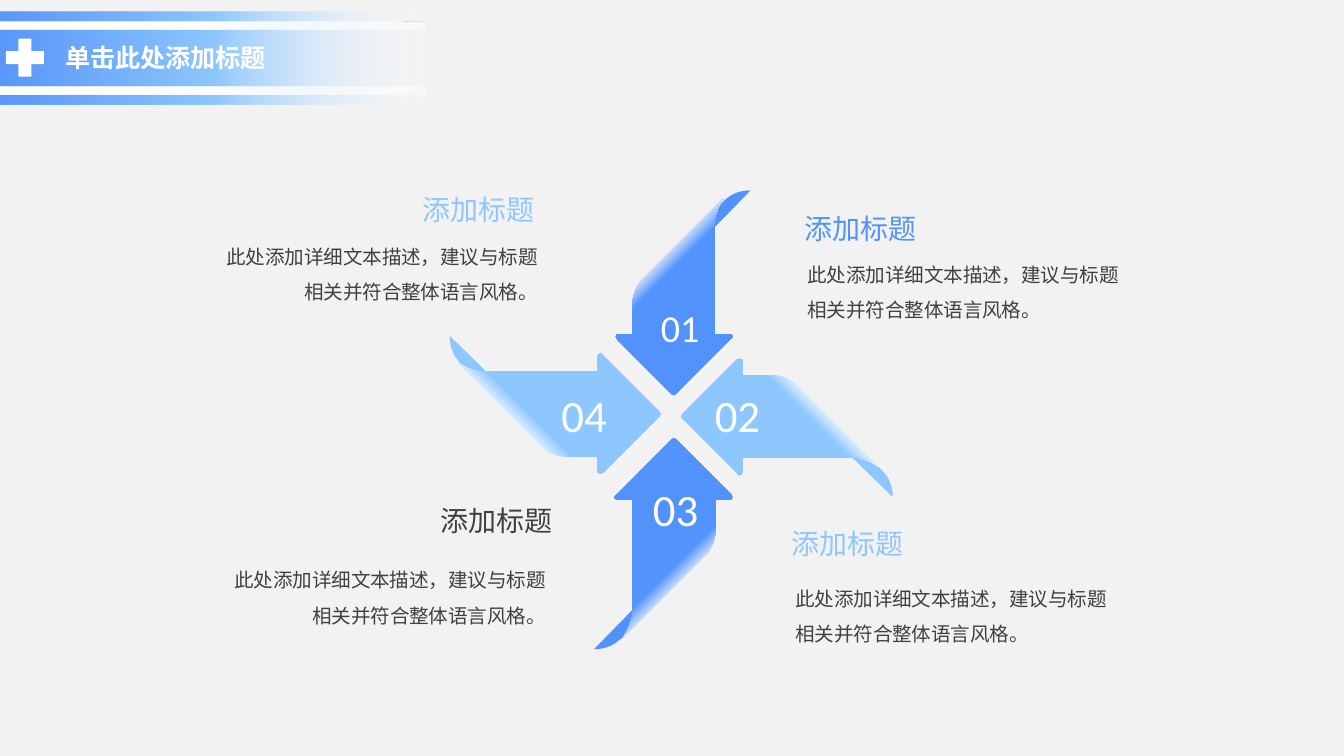
from lxml import etree
from pptx import Presentation
from pptx.dml.color import RGBColor
from pptx.enum.shapes import MSO_SHAPE
from pptx.enum.text import MSO_ANCHOR, PP_ALIGN
from pptx.oxml.ns import qn
from pptx.util import Cm, Pt

RECTANGLE, PLUS = MSO_SHAPE.RECTANGLE, MSO_SHAPE.CROSS
TOP, MIDDLE, BOTTOM = MSO_ANCHOR.TOP, MSO_ANCHOR.MIDDLE, MSO_ANCHOR.BOTTOM
LEFT, RIGHT = PP_ALIGN.LEFT, PP_ALIGN.RIGHT

BLUE, SKY, WHITE, GREY, BACKGROUND = "5293FB", "8DC7FE", "FFFFFF", "404040", "F2F2F2"
CHINESE, LATIN = "Noto Sans CJK SC", "Calibri"

HEADING = "单击此处添加标题"
TITLE = "添加标题"
BODY = "此处添加详细文本描述，建议与标题相关并符合整体语言风格。"

# Header bands: top, height, gradient stops (position %, colour, opacity %)
BAND_WIDTH = 8.05
STRIPE = [(0, WHITE, 100), (50, WHITE, 100), (100, WHITE, 50)]
BANDS = [
    (0.23, 1.75, [(0, BLUE, 95), (50, SKY, 100), (100, WHITE, 8)]),
    (0.41, 0.15, STRIPE),
    (1.64, 0.15, STRIPE),
]

# Blade pointing right, tip at the origin, in cm.
# A step is one point (line) or three points (Bezier curve).
RIBBON = [
    [(-1.09, 1.1)],
    [(-0.05, 0.06)],
    [(0, 0.03), (0, -0.03), (-0.05, -0.06)],
    [(-1.09, -1.1)],
    [(-1.12, -1.16), (-1.17, -1.16), (-1.19, -1.1)],
    [(-1.19, -0.8)],
    [(-3.28, -0.8)],
    [(-3.28, -0.8), (-3.33, -0.8), (-3.43, -0.8)],
    [(-3.61, -0.85), (-3.73, -0.9), (-3.84, -0.98)],
    [(-2.26, 0.6)],
    [(-2.26, 0.6), (-2.08, 0.83), (-1.65, 0.8)],
    [(-1.19, 0.8)],
    [(-1.19, 1.1)],
    [(-1.17, 1.13), (-1.12, 1.13), (-1.09, 1.1)],
]
CURL = [
    [(-3.18, -0.7)],
    [(-3.99, -1.49)],
    [(-3.99, -1.49), (-4.01, -1.21), (-3.81, -1)],
    [(-3.78, -0.95), (-3.76, -0.93), (-3.71, -0.9)],
    [(-3.63, -0.83), (-3.48, -0.75), (-3.3, -0.72)],
    [(-3.28, -0.72), (-3.23, -0.7), (-3.18, -0.7)],
]

BLADES = [
    dict(number="01", color=BLUE, turns=1, scale=0.97,
         tip=(12.73, 7.47), curl_tip=(12.74, 7.47),
         label=(12.24, 5.56, 1.27, 1.24), size=20.4,
         title=(14.96, 3.51), title_color=BLUE, body=(15.01, 4.4), align=LEFT),
    dict(number="03", color=BLUE, turns=3, scale=0.98,
         tip=(12.74, 8.28), curl_tip=(12.69, 8.36),
         label=(12.09, 8.81, 1.57, 1.6), size=24,
         title=(4.22, 9.04), title_color=GREY, body=(4.09, 10.17), align=RIGHT),
    dict(number="04", color=SKY, turns=0, scale=1,
         tip=(12.49, 7.83), curl_tip=(12.49, 7.84),
         label=(10.36, 7.04, 1.57, 1.6), size=24,
         title=(3.88, 3.16), title_color=SKY, body=(3.94, 4.06), align=RIGHT),
    dict(number="02", color=SKY, turns=2, scale=0.97,
         tip=(12.87, 7.87), curl_tip=(13, 7.95),
         label=(13.26, 7.04, 1.57, 1.6), size=24,
         title=(14.71, 9.47), title_color=SKY, body=(14.78, 10.52), align=LEFT),
]
TITLE_SIZE, BODY_SIZE = (6.48, 1.24), (6.48, 2.03)


def rgb(value):
    return RGBColor.from_string(value)


def fill_solid(shape, color):
    shape.shadow.inherit = False
    shape.line.fill.background()
    shape.fill.solid()
    shape.fill.fore_color.rgb = rgb(color)


def fill_gradient(shape, stops, angle):
    """Linear gradient; the angle runs counter-clockwise from left-to-right."""
    shape.shadow.inherit = False
    shape.line.fill.background()
    shape.fill.gradient()
    shape.fill.gradient_angle = angle
    stop_list = shape._element.spPr.find(qn("a:gradFill")).find(qn("a:gsLst"))
    for stop in list(stop_list):
        stop_list.remove(stop)
    for position, color, opacity in stops:
        stop = etree.SubElement(stop_list, qn("a:gs"), pos=str(position * 1000))
        color_element = etree.SubElement(stop, qn("a:srgbClr"), val=color)
        if opacity < 100:
            etree.SubElement(color_element, qn("a:alpha"), val=str(opacity * 1000))


def add_text(slide, box, text, color, size, font=CHINESE, bold=False,
             anchor=TOP, **paragraph_format):
    shape = slide.shapes.add_textbox(*map(Cm, box))
    frame = shape.text_frame
    frame.word_wrap = True
    frame.vertical_anchor = anchor
    paragraph = frame.paragraphs[0]
    for name, value in paragraph_format.items():
        setattr(paragraph, name, value)
    run = paragraph.add_run()
    run.text = text
    for name, value in dict(name=font, size=Pt(size), bold=bold).items():
        setattr(run.font, name, value)
    run.font.color.rgb = rgb(color)
    etree.SubElement(run._r.get_or_add_rPr(), qn("a:ea"), typeface=font)


def add_outline(slide, steps, blade, tip):
    """Scale the steps, turn them clockwise by quarters and move them to the tip."""
    placed = []
    for x, y in sum(steps, []):
        for _ in range(blade["turns"]):
            x, y = -y, x
        placed.append(tuple(Cm(start + blade["scale"] * offset)
                            for start, offset in zip(tip, (x, y))))
    builder = slide.shapes.build_freeform(*placed[0], scale=1.0)
    builder.add_line_segments(placed[1:], close=True)
    shape = builder.convert_to_shape()
    join_curves(shape, steps)
    return shape


def join_curves(shape, steps):
    """Merge the three line segments of each curve step into one Bezier curve."""
    lines = iter(list(shape._element.spPr.iter(qn("a:lnTo"))))
    for step in steps[1:]:
        segments = [next(lines) for _ in step]
        if len(segments) == 3:
            curve = etree.Element(qn("a:cubicBezTo"))
            segments[0].addprevious(curve)
            for segment in segments:
                curve.append(segment[0])
                segment.getparent().remove(segment)


def add_header(slide):
    for top, height, stops in BANDS:
        band = slide.shapes.add_shape(RECTANGLE, 0, Cm(top), Cm(BAND_WIDTH), Cm(height))
        fill_gradient(band, stops, 0)
    plus = slide.shapes.add_shape(PLUS, Cm(0.11), Cm(0.73), Cm(0.72), Cm(0.72))
    plus.adjustments[0] = 0.33
    fill_solid(plus, WHITE)
    add_text(slide, (0.99, 0.67, 5.61, 0.84), HEADING, WHITE, 13.5, bold=True)


def add_blade(slide, blade):
    color = blade["color"]
    fill_solid(add_outline(slide, CURL, blade, blade["curl_tip"]), color)
    fold = [(2, WHITE, 100), (31, WHITE, 100), (41, color, 100), (100, color, 100)]
    fill_gradient(add_outline(slide, RIBBON, blade, blade["tip"]), fold,
                  (45 - 90 * blade["turns"]) % 360)
    add_text(slide, blade["label"], blade["number"], WHITE, blade["size"],
             font=LATIN, anchor=MIDDLE)
    add_text(slide, blade["title"] + TITLE_SIZE, TITLE, blade["title_color"], 15,
             anchor=BOTTOM, alignment=blade["align"])
    add_text(slide, blade["body"] + BODY_SIZE, BODY, GREY, 10.5,
             anchor=MIDDLE, alignment=blade["align"], line_spacing=1.5)


def main():
    presentation = Presentation()
    presentation.slide_width, presentation.slide_height = Cm(25.4), Cm(14.29)
    slide = presentation.slides.add_slide(presentation.slide_layouts[6])
    slide.background.fill.solid()
    slide.background.fill.fore_color.rgb = rgb(BACKGROUND)
    add_header(slide)
    for blade in BLADES:
        add_blade(slide, blade)
    presentation.save("out.pptx")


if __name__ == "__main__":
    main()
